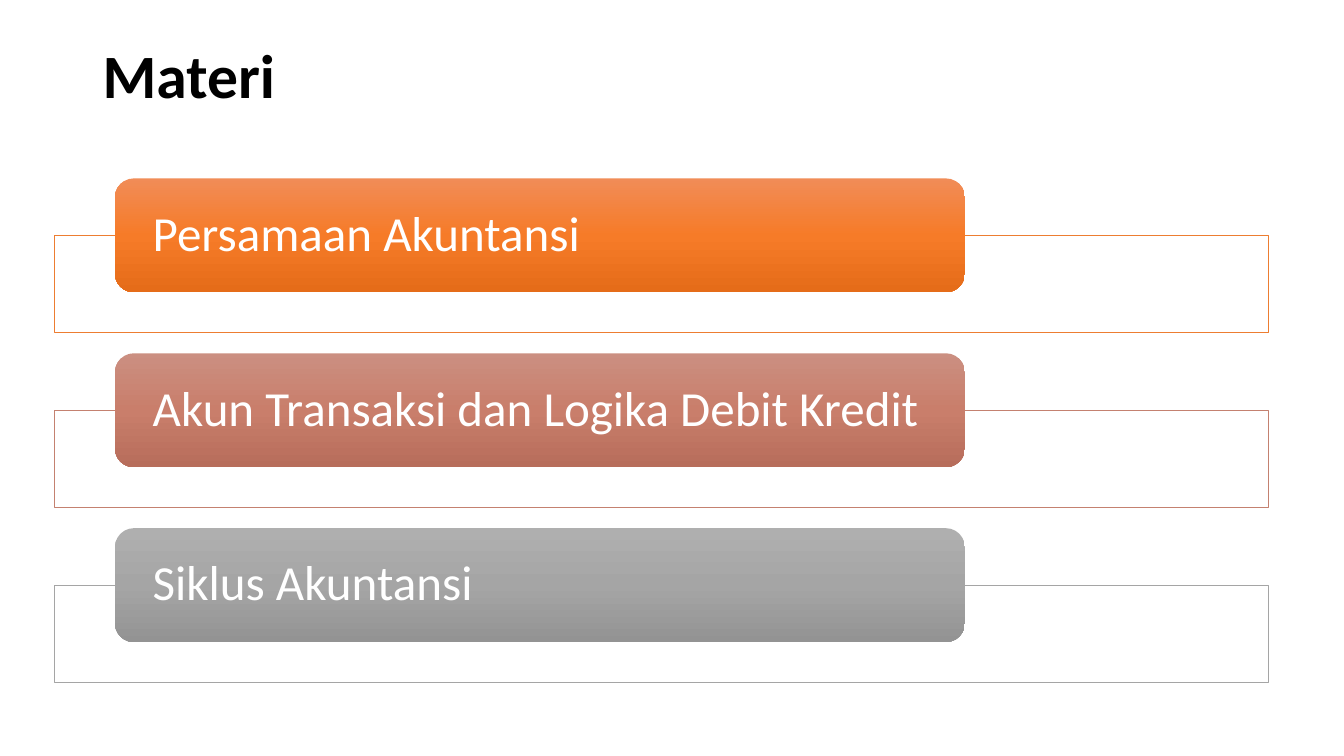
from copy import deepcopy
from dataclasses import dataclass

from lxml.etree import SubElement
from pptx import Presentation
from pptx.dml.color import RGBColor
from pptx.enum.shapes import MSO_SHAPE
from pptx.enum.text import MSO_ANCHOR, PP_ALIGN
from pptx.oxml.ns import qn
from pptx.shapes.autoshape import Shape
from pptx.slide import Slide
from pptx.text.text import TextFrame
from pptx.util import Inches, Pt

FONT = "Calibri"
BLACK = RGBColor(0x00, 0x00, 0x00)
WHITE = RGBColor(0xFF, 0xFF, 0xFF)
FIRST_TOP = 1.77
TOPIC_STEP = 1.735
FRAME_OFFSET = 0.57


@dataclass(frozen=True)
class Topic:
    label: str
    outline: RGBColor
    gradient: tuple[RGBColor, RGBColor, RGBColor]


TOPICS = [
    Topic(
        "Persamaan Akuntansi",
        RGBColor(0xED, 0x7D, 0x31),
        (RGBColor(0xF1, 0x8C, 0x57), RGBColor(0xF6, 0x7B, 0x28), RGBColor(0xE5, 0x6C, 0x19)),
    ),
    Topic(
        "Akun Transaksi dan Logika Debit Kredit",
        RGBColor(0xC4, 0x81, 0x70),
        (RGBColor(0xCB, 0x8F, 0x81), RGBColor(0xC9, 0x7E, 0x6B), RGBColor(0xB7, 0x6D, 0x5B)),
    ),
    Topic(
        "Siklus Akuntansi",
        RGBColor(0xA5, 0xA5, 0xA5),
        (RGBColor(0xAF, 0xAF, 0xAF), RGBColor(0xA5, 0xA5, 0xA5), RGBColor(0x93, 0x93, 0x93)),
    ),
]


def write_text(frame: TextFrame, text: str, size: float, color: RGBColor, bold: bool = False) -> None:
    frame.word_wrap = True
    paragraph = frame.paragraphs[0]
    paragraph.text = text
    paragraph.alignment = PP_ALIGN.LEFT
    paragraph.line_spacing = 0.9
    font = paragraph.font
    font.name, font.size, font.bold = FONT, Pt(size), bold
    font.color.rgb = color


def fill_gradient(shape: Shape, colors: tuple[RGBColor, ...]) -> None:
    """Fill the shape from top to bottom with three evenly spaced colours."""
    shape.fill.gradient()
    shape.fill.gradient_angle = 270
    stop_list = shape._element.spPr.find(qn("a:gradFill")).find(qn("a:gsLst"))
    stop_list.append(deepcopy(stop_list[-1]))
    for index, (stop, color) in enumerate(zip(shape.fill.gradient_stops, colors)):
        stop.position = index / 2
        stop.color.rgb = color


def add_title(slide: Slide, text: str) -> None:
    title = slide.shapes.add_textbox(Inches(0.92), Inches(0.4), Inches(11.5), Inches(1.45))
    title.text_frame.vertical_anchor = MSO_ANCHOR.TOP
    write_text(title.text_frame, text, 44, BLACK, bold=True)


def add_frame(slide: Slide, top: float, outline: RGBColor) -> None:
    frame = slide.shapes.add_shape(
        MSO_SHAPE.RECTANGLE, Inches(0.54), Inches(top), Inches(12.04), Inches(0.96)
    )
    frame.shadow.inherit = False
    frame.fill.solid()
    frame.fill.fore_color.rgb = WHITE
    white = frame._element.spPr.find(qn("a:solidFill"))[0]
    SubElement(white, qn("a:alpha"), val="90000")
    frame.line.color.rgb = outline
    frame.line.width = Pt(0.5)


def add_topic(slide: Slide, topic: Topic, top: float) -> None:
    add_frame(slide, top + FRAME_OFFSET, topic.outline)
    bar = slide.shapes.add_shape(
        MSO_SHAPE.ROUNDED_RECTANGLE, Inches(1.14), Inches(top), Inches(8.43), Inches(1.13)
    )
    bar.shadow.inherit = False
    fill_gradient(bar, topic.gradient)
    bar.line.fill.background()
    text_frame = bar.text_frame
    text_frame.margin_left = text_frame.margin_right = Inches(0.32)
    text_frame.margin_top = text_frame.margin_bottom = 0
    text_frame.vertical_anchor = MSO_ANCHOR.MIDDLE
    write_text(text_frame, topic.label, 35, WHITE)


def main() -> None:
    presentation = Presentation()
    presentation.slide_width = Inches(13.33)
    presentation.slide_height = Inches(7.5)
    slide = presentation.slides.add_slide(presentation.slide_layouts[6])
    add_title(slide, "Materi")
    for index, topic in enumerate(TOPICS):
        add_topic(slide, topic, FIRST_TOP + index * TOPIC_STEP)
    presentation.save("out.pptx")


if __name__ == "__main__":
    main()
